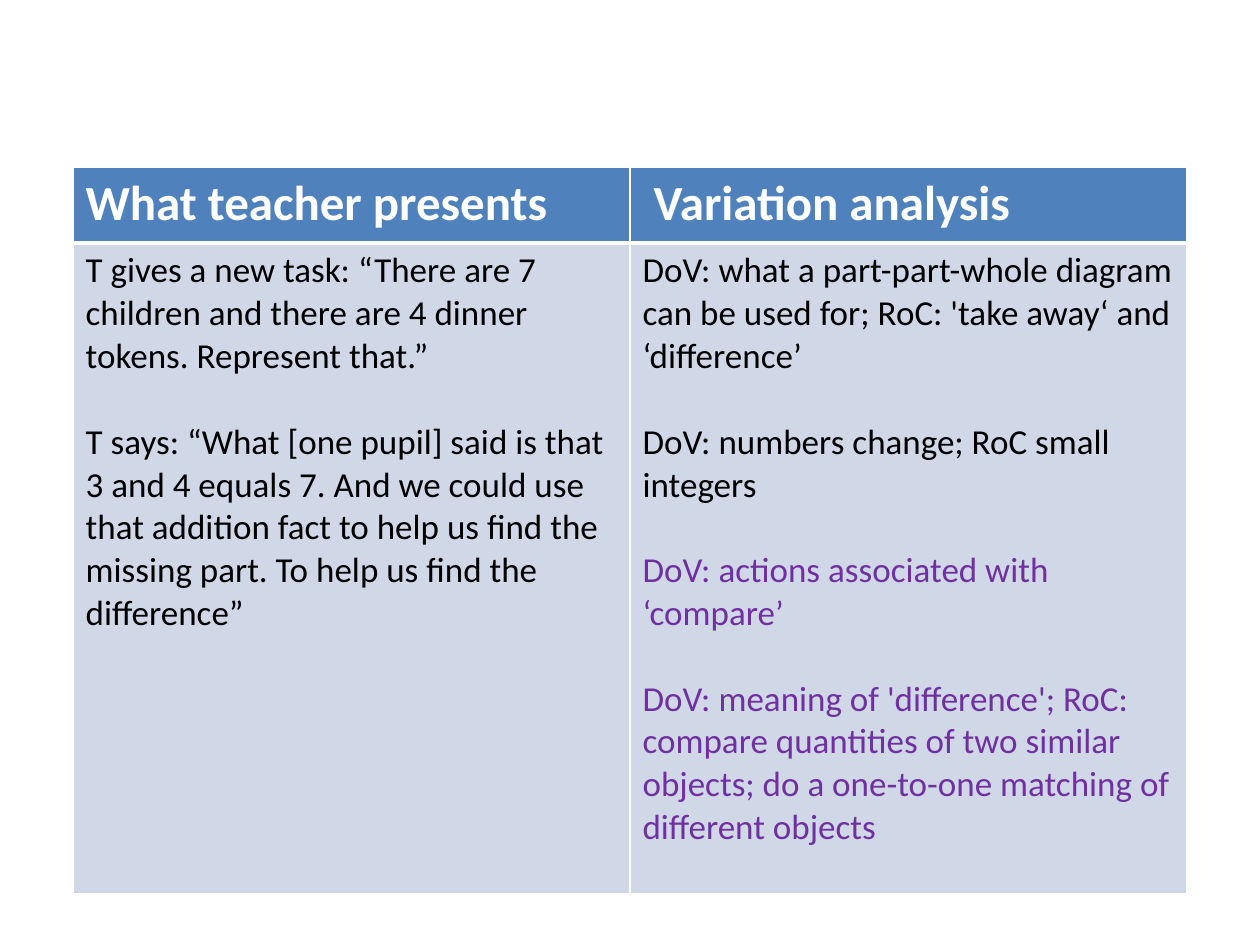
"""Build a slide with a two-column table of teaching steps and their variation analysis."""
from lxml import etree
from pptx import Presentation
from pptx import util as u
from pptx.dml.color import RGBColor
from pptx.oxml.ns import qn

COLORS = {"header": "4F81BD", "body": "D0D8E8", "white": "FFFFFF", "black": "000000", "purple": "7030A0"}
ROW_HEIGHTS = [0.6, 5.16]
COLUMN_WIDTH = 4.42
LINE_GAP = u.Pt(24.4)

columns = [
    ("What teacher presents", [
        ("T gives a new task: “There are 7 children and there are 4 dinner tokens. Represent that.”", "black"),
        ("T says: “What [one pupil] said is that 3 and 4 equals 7. And we could use that addition fact "
         "to help us find the missing part. To help us find the difference”", "black"),
    ]),
    (" Variation analysis", [
        ("DoV: what a part-part-whole diagram can be used for; RoC: 'take away‘ and ‘difference’", "black"),
        ("DoV: numbers change; RoC small integers", "black"),
        ("DoV: actions associated with ‘compare’", "purple"),
        ("DoV: meaning of 'difference'; RoC: compare quantities of two similar objects; "
         "do a one-to-one matching of different objects", "purple"),
    ]),
]


def format_cell(cell, fill, bottom_width):
    properties = cell._tc.get_or_add_tcPr()
    for position, side in enumerate(("lnL", "lnR", "lnT", "lnB")):
        width = bottom_width if side == "lnB" else 1
        line = etree.Element(qn(f"a:{side}"), w=str(u.Pt(width)))
        solid = etree.SubElement(line, qn("a:solidFill"))
        etree.SubElement(solid, qn("a:srgbClr"), val=COLORS["white"])
        properties.insert(position, line)
    cell.fill.solid()
    cell.fill.fore_color.rgb = RGBColor.from_string(COLORS[fill])


def write_paragraphs(cell, entries, size, bold):
    for index, (wording, color) in enumerate(entries):
        frame = cell.text_frame
        paragraph = frame.add_paragraph() if index else frame.paragraphs[0]
        if index:
            paragraph.space_before = LINE_GAP
        run = paragraph.add_run()
        run.text = wording
        run.font.name = "Calibri"
        run.font.size = u.Pt(size)
        run.font.bold = bold
        run.font.color.rgb = RGBColor.from_string(COLORS[color])


presentation = Presentation()
presentation.slide_width, presentation.slide_height = u.Inches(10), u.Inches(7.5)
slide = presentation.slides.add_slide(presentation.slide_layouts[6])

table = slide.shapes.add_table(
    len(ROW_HEIGHTS), len(columns), u.Inches(0.58), u.Inches(1.33),
    u.Inches(COLUMN_WIDTH * len(columns)), u.Inches(sum(ROW_HEIGHTS))).table
for row, height in zip(table.rows, ROW_HEIGHTS):
    row.height = u.Inches(height)

for index, (heading, entries) in enumerate(columns):
    table.columns[index].width = u.Inches(COLUMN_WIDTH)
    header_cell, body_cell = table.cell(0, index), table.cell(1, index)
    format_cell(header_cell, "header", 3)
    write_paragraphs(header_cell, [(heading, "white")], 28, True)
    format_cell(body_cell, "body", 1)
    body_cell._tc.tcPr.find(qn("a:lnT")).set("w", str(u.Pt(3)))
    write_paragraphs(body_cell, entries, 20, False)

presentation.save("out.pptx")
